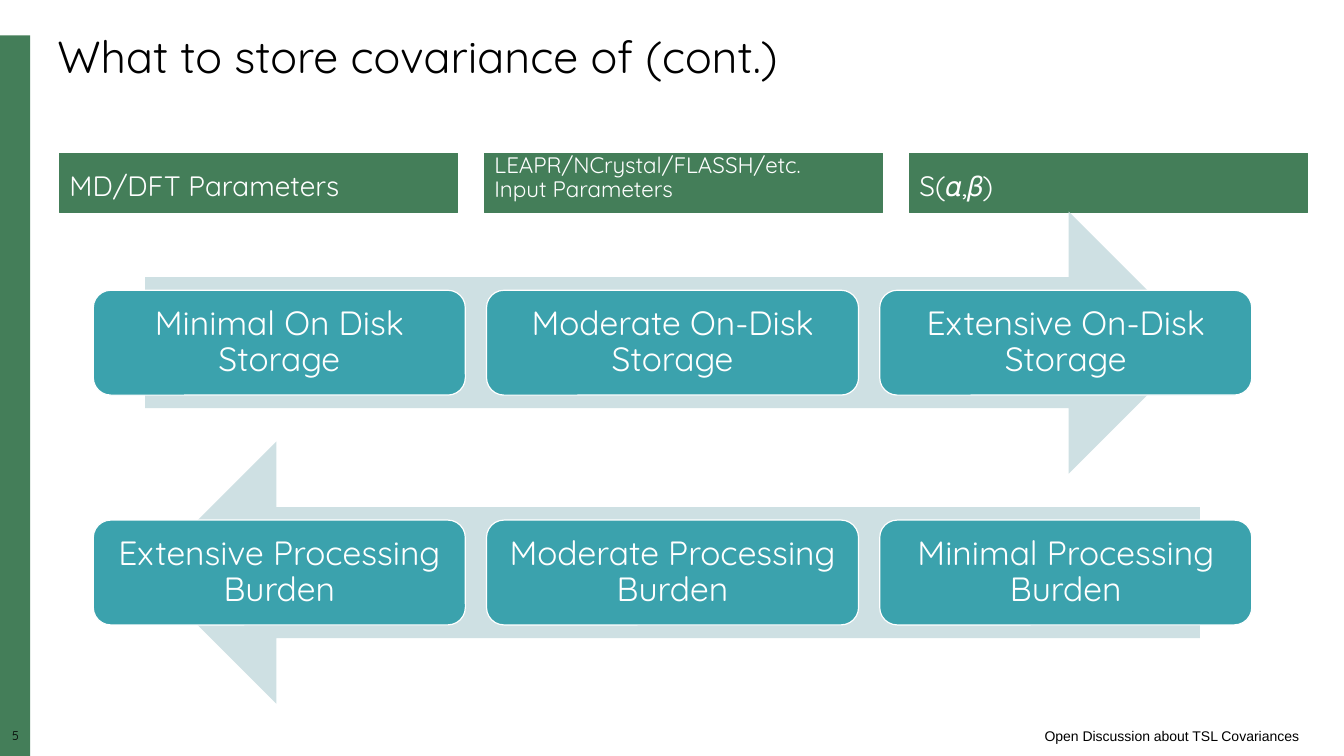
import pptx
import pptx.util
import pptx.dml.color
import pptx.enum.shapes
import pptx.enum.text

Inches = pptx.util.Inches
SHAPE = pptx.enum.shapes.MSO_SHAPE
ALIGN = pptx.enum.text.PP_ALIGN
ANCHOR = pptx.enum.text.MSO_ANCHOR

GREEN, TEAL, PALE = "447E59", "3BA2AD", "CEE0E3"
WHITE, BLACK = "FFFFFF", "000000"


def rgb(value):
    return pptx.dml.color.RGBColor.from_string(value)


def write(s, text, size, color, font="Quicksand", align=ALIGN.LEFT,
          anchor=ANCHOR.TOP, inset=(0.1, 0.05), spacing=0.9):
    """Set a shape's text; inset is (sides, top and bottom) in inches."""
    tf = s.text_frame
    tf.word_wrap = True
    tf.vertical_anchor = anchor
    tf.margin_left = tf.margin_right = Inches(inset[0])
    tf.margin_top = tf.margin_bottom = Inches(inset[1])
    p = tf.paragraphs[0]
    p.text = text
    p.alignment = align
    p.line_spacing = spacing
    for r in p.runs:
        r.font.name = font
        r.font.size = pptx.util.Pt(size)
        r.font.color.rgb = rgb(color)


def add_text(slide, box, text, size, **style):
    s = slide.shapes.add_textbox(*map(Inches, box))
    write(s, text, size, BLACK, **style)


def add_block(slide, kind, box, fill, line=None, width=1):
    s = slide.shapes.add_shape(kind, *map(Inches, box))
    s.shadow.inherit = False
    s.fill.solid()
    s.fill.fore_color.rgb = rgb(fill)
    if line:
        s.line.color.rgb = rgb(line)
        s.line.width = pptx.util.Pt(width)
    else:
        s.line.fill.background()
    return s


def add_frame(slide, title, number, footer):
    """Side bar, title, slide number and footer."""
    add_block(slide, SHAPE.RECTANGLE, (0, 0.35, 0.3, 7.15), GREEN)
    add_text(slide, (0, 7.24, 0.31, 0.17), number, 9,
             align=ALIGN.CENTER, inset=(0, 0))
    add_text(slide, (6.24, 7.2, 6.74, 0.2), footer, 10, font="Arial",
             align=ALIGN.RIGHT, anchor=ANCHOR.MIDDLE, spacing=1)
    add_text(slide, (0.47, 0.3, 12.58, 0.59), title, 32)


def add_headers(slide, box, headers):
    """Spread the column headers evenly from edge to edge of the box."""
    left, top, width, height = box
    header_width = 3.95
    pitch = (width - header_width) / (len(headers) - 1)
    for i, (text, size) in enumerate(headers):
        s = add_block(slide, SHAPE.RECTANGLE,
                      (left + i * pitch, top, header_width, height), GREEN, GREEN)
        write(s, text, size, WHITE, anchor=ANCHOR.BOTTOM, inset=(0.1, 0.1))


def add_arrow_row(slide, box, labels, rotation=0):
    """Wide arrow filling the box, with a centred row of cards on it."""
    left, top, width, height = box
    arrow = add_block(slide, SHAPE.RIGHT_ARROW, box, PALE)
    arrow.rotation = rotation
    card_width, card_height, pitch = 3.69, 1.04, 3.9
    row_width = card_width + pitch * (len(labels) - 1)
    x = left + (width - row_width) / 2
    y = top + (height - card_height) / 2
    for i, label in enumerate(labels):
        s = add_block(slide, SHAPE.ROUNDED_RECTANGLE,
                      (x + i * pitch, y, card_width, card_height), TEAL, WHITE, 0.85)
        write(s, label, 24, WHITE, align=ALIGN.CENTER,
              anchor=ANCHOR.MIDDLE, inset=(0.1, 0.1))


def main():
    prs = pptx.Presentation()
    prs.slide_width, prs.slide_height = Inches(13.33), Inches(7.5)
    slide = prs.slides.add_slide(prs.slide_layouts[6])
    add_frame(slide, "What to store covariance of (cont.)", "5",
              "Open Discussion about TSL Covariances")
    add_headers(slide, (0.59, 1.52, 12.38, 0.59), [
        ("MD/DFT Parameters", 20),
        ("LEAPR/NCrystal/FLASSH/etc.\vInput Parameters", 16),
        ("S(𝛼,𝛽)", 20),
    ])
    add_arrow_row(slide, (1.44, 2.1, 10.46, 2.6), [
        "Minimal On Disk Storage",
        "Moderate On-Disk Storage",
        "Extensive On-Disk Storage",
    ])
    add_arrow_row(slide, (1.44, 4.38, 10.46, 2.6), [
        "Extensive Processing Burden",
        "Moderate Processing Burden",
        "Minimal Processing Burden",
    ], rotation=180)
    prs.save("out.pptx")


if __name__ == "__main__":
    main()
